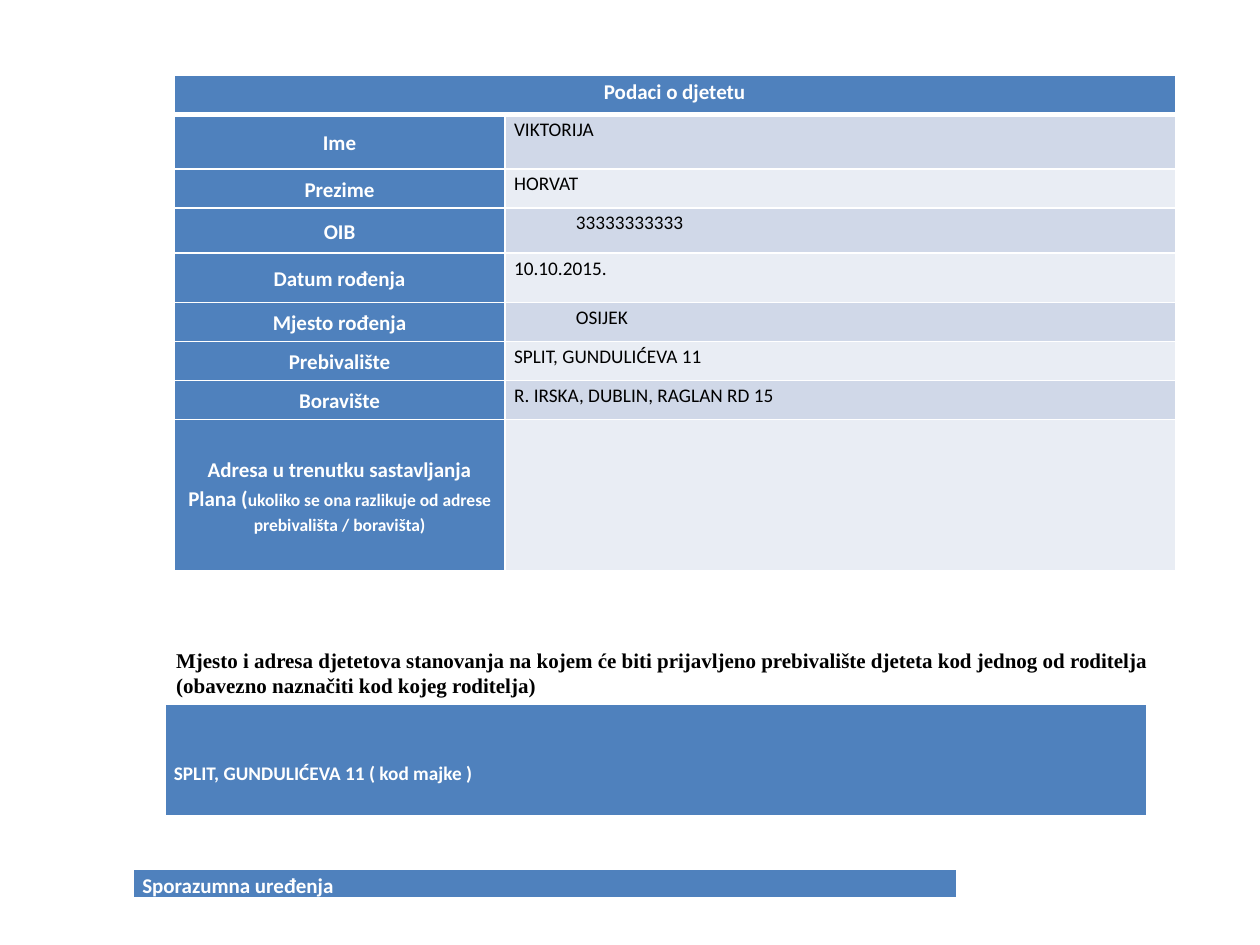
from dataclasses import dataclass
from typing import NamedTuple

from lxml.etree import SubElement, Element
from pptx import Presentation
from pptx.dml.color import RGBColor
from pptx.enum.text import MSO_ANCHOR as Anchor, PP_ALIGN as Align
from pptx.oxml.ns import qn
from pptx.util import Inches, Pt


@dataclass(frozen=True)
class Theme:
    blue: str = "4F81BD"
    bands: tuple[str, str] = ("D0D8E8", "E9EDF4")
    white: str = "FFFFFF"
    black: str = "000000"
    body_font: str = "Calibri"
    heading_font: str = "Times New Roman"
    label_size: int = 12
    value_size: int = 11
    note_size: int = 10
    thin: int = 1
    thick: int = 3


THEME = Theme()


class Run(NamedTuple):
    text: str
    size: int = THEME.label_size
    color: str = THEME.white
    bold: bool = True
    font: str = THEME.body_font


@dataclass(frozen=True)
class CellLook:
    fill: str = THEME.blue
    align: Align = Align.LEFT
    anchor: Anchor = Anchor.TOP
    top_margin: float = 0
    indent: float = 0
    space_after: int = 10
    top_border: int = THEME.thin
    bottom_border: int = THEME.thin


class Detail(NamedTuple):
    label: str
    value: str
    height: float
    indent: float = 0
    note: str = ""


class Banner(NamedTuple):
    run: Run
    box: tuple[float, float, float, float]
    look: CellLook


DETAILS = [
    Detail("Ime", "VIKTORIJA", 0.43),
    Detail("Prezime", "HORVAT", 0.31),
    Detail("OIB", "33333333333", 0.36, indent=0.49),
    Detail("Datum rođenja", "10.10.2015.", 0.39),
    Detail("Mjesto rođenja", "OSIJEK", 0.31, indent=0.49),
    Detail("Prebivalište", "SPLIT, GUNDULIĆEVA 11", 0.31),
    Detail("Boravište", "R. IRSKA, DUBLIN, RAGLAN RD 15", 0.31),
    Detail("Adresa u trenutku sastavljanja Plana (", "", 1.2,
           note="ukoliko se ona razlikuje od adrese prebivališta / boravišta)"),
]

BANNERS = [
    Banner(Run("SPLIT, GUNDULIĆEVA 11 ( kod majke )", THEME.value_size),
           (1.31, 5.59, 7.79, 0.9),
           CellLook(top_margin=0.43, space_after=0, bottom_border=THEME.thick)),
    Banner(Run("Sporazumna uređenja"), (1.06, 6.9, 6.53, 0.23),
           CellLook(bottom_border=THEME.thick)),
]


def apply_format(target, values: dict) -> None:
    for attribute, value in values.items():
        setattr(target, attribute, value)


def write_run(paragraph, content: Run) -> None:
    run = paragraph.add_run()
    run.text = content.text
    apply_format(run.font, {"size": Pt(content.size), "bold": content.bold,
                            "name": content.font})
    run.font.color.rgb = RGBColor.from_string(content.color)


def set_borders(cell, look: CellLook) -> None:
    properties = cell._tc.get_or_add_tcPr()
    widths = {"L": THEME.thin, "R": THEME.thin,
              "T": look.top_border, "B": look.bottom_border}
    for position, (side, width) in enumerate(widths.items()):
        border = Element(qn(f"a:ln{side}"), w=str(Pt(width)))
        fill = SubElement(border, qn("a:solidFill"))
        SubElement(fill, qn("a:srgbClr"), val=THEME.white)
        properties.insert(position, border)


def fill_cell(cell, runs: list[Run], look: CellLook) -> None:
    apply_format(cell, {
        "margin_left": Inches(0.07), "margin_right": Inches(0.07),
        "margin_top": Inches(look.top_margin), "margin_bottom": 0,
        "vertical_anchor": look.anchor,
    })
    cell.fill.solid()
    cell.fill.fore_color.rgb = RGBColor.from_string(look.fill)
    set_borders(cell, look)
    paragraph = cell.text_frame.paragraphs[0]
    apply_format(paragraph, {"alignment": look.align, "line_spacing": 1.15,
                             "space_after": Pt(look.space_after)})
    if look.indent:
        paragraph._p.get_or_add_pPr().set("indent", str(Inches(look.indent)))
    for run in runs:
        write_run(paragraph, run)


def add_plain_table(slide, left: float, top: float,
                    widths: list[float], heights: list[float]):
    table = slide.shapes.add_table(
        len(heights), len(widths), Inches(left), Inches(top),
        Inches(sum(widths)), Inches(sum(heights))).table
    apply_format(table, {"first_row": False, "horz_banding": False})
    for column, width in zip(table.columns, widths):
        column.width = Inches(width)
    for row, height in zip(table.rows, heights):
        row.height = Inches(height)
    return table


def add_child_details(slide, details: list[Detail]) -> None:
    heights = [0.31] + [detail.height for detail in details]
    table = add_plain_table(slide, 1.38, 0.6, [2.63, 5.32], heights)
    table.cell(0, 0).merge(table.cell(0, 1))
    header = CellLook(align=Align.CENTER, bottom_border=THEME.thick)
    fill_cell(table.cell(0, 0), [Run("Podaci o djetetu")], header)
    set_borders(table.cell(0, 1), header)
    for index, detail in enumerate(details):
        top_border = THEME.thin if index else THEME.thick
        label = [Run(detail.label)]
        if detail.note:
            label.append(Run(detail.note, THEME.note_size))
        value = [Run(detail.value, THEME.value_size, THEME.black, False)]
        fill_cell(table.cell(index + 1, 0), label,
                  CellLook(align=Align.CENTER, anchor=Anchor.MIDDLE,
                           top_border=top_border))
        fill_cell(table.cell(index + 1, 1), value if detail.value else [],
                  CellLook(fill=THEME.bands[index % 2], indent=detail.indent,
                           top_border=top_border))


def add_banner(slide, banner: Banner) -> None:
    left, top, width, height = banner.box
    table = add_plain_table(slide, left, top, [width], [height])
    fill_cell(table.cell(0, 0), [banner.run], banner.look)


def add_residence_heading(slide) -> None:
    heading = slide.shapes.add_textbox(
        Inches(1.3), Inches(4.88), Inches(8.5), Inches(0.71)).text_frame
    apply_format(heading, {"word_wrap": True, "vertical_anchor": Anchor.BOTTOM})
    write_run(heading.paragraphs[0], Run(
        "Mjesto i adresa djetetova stanovanja na kojem će biti prijavljeno "
        "prebivalište djeteta kod jednog od roditelja "
        "(obavezno naznačiti kod kojeg roditelja)",
        color=THEME.black, font=THEME.heading_font))


def main() -> None:
    deck = Presentation()
    apply_format(deck, {"slide_width": Inches(10), "slide_height": Inches(7.5)})
    slide = deck.slides.add_slide(deck.slide_layouts[6])
    add_child_details(slide, DETAILS)
    for banner in BANNERS:
        add_banner(slide, banner)
    add_residence_heading(slide)
    deck.save("out.pptx")


if __name__ == "__main__":
    main()
